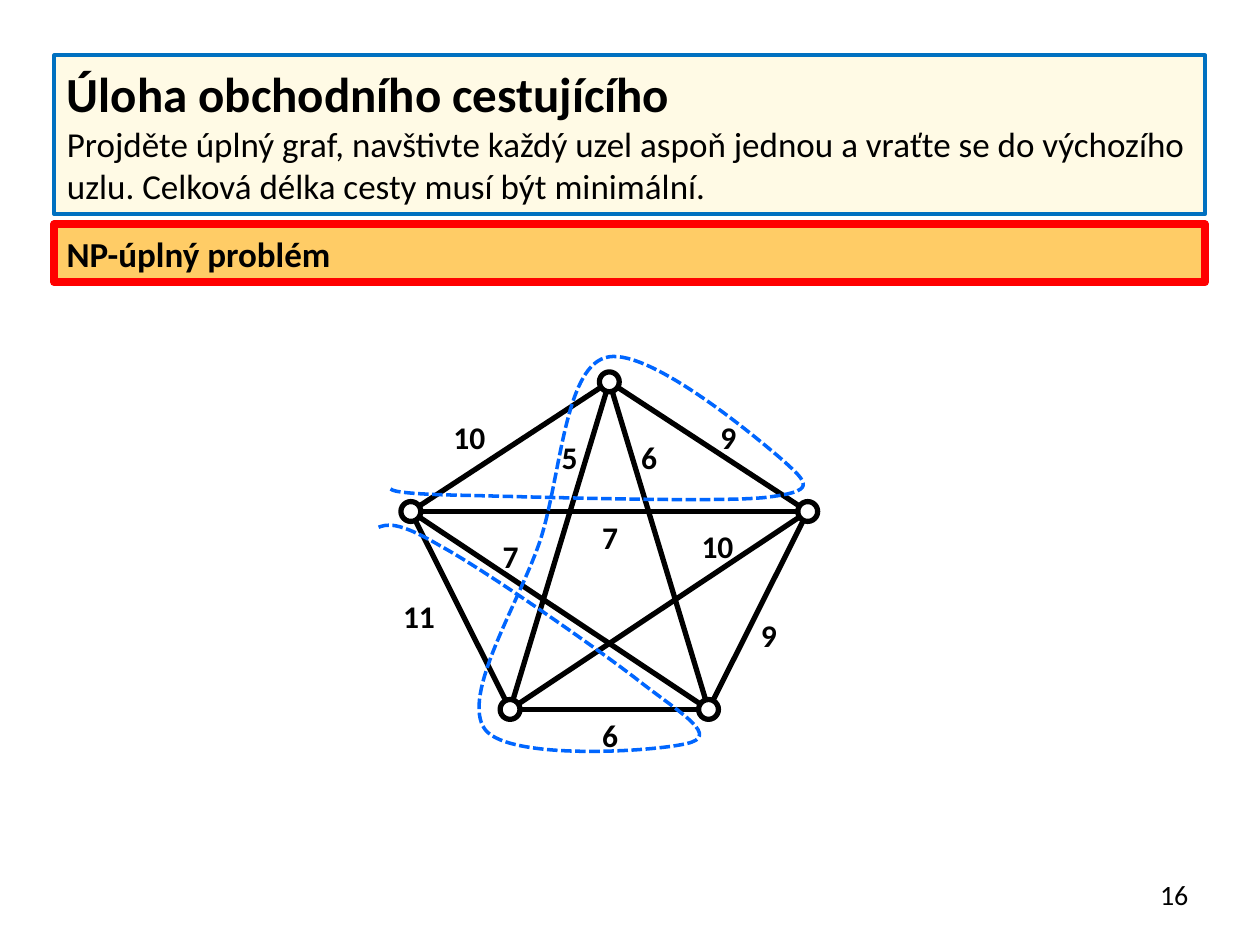
from itertools import combinations

from lxml import etree
from pptx import Presentation
from pptx import util as u
from pptx.enum import dml, shapes, text
from pptx.dml.color import RGBColor
from pptx.oxml import ns

COLORS = {"ink": "000000", "paper": "FFFFFF", "cream": "FFFAE5", "blue": "0070C0",
          "amber": "FFCC66", "red": "FF0000", "tour": "0066FF"}


class Deck:
    font = "Calibri"

    def __init__(self, prs):
        self.prs = prs
        self.s = prs.slides.add_slide(prs.slide_layouts[5])

    def color(self, name):
        return RGBColor.from_string(COLORS[name])

    def paint(self, sp, fill, line, width):
        if fill:
            sp.fill.solid()
            sp.fill.fore_color.rgb = self.color(fill)
        else:
            sp.fill.background()
        self.stroke(sp, line, width)

    def stroke(self, sp, line, width):
        sp.line.color.rgb = self.color(line)
        sp.line.width = u.Pt(width)

    def place(self, sp, box):
        for name, value in zip(("left", "top", "width", "height"), box):
            setattr(sp, name, u.Pt(value))

    def set_text(self, sp, lines, align="LEFT", anchor="MIDDLE", wrap=True):
        tf = sp.text_frame
        frame = {"word_wrap": wrap, "vertical_anchor": text.MSO_ANCHOR[anchor],
                 "auto_size": text.MSO_AUTO_SIZE.NONE if wrap
                 else text.MSO_AUTO_SIZE.SHAPE_TO_FIT_TEXT}
        for name, value in frame.items():
            setattr(tf, name, value)
        for i, (words, size, bold) in enumerate(lines):
            p = tf.paragraphs[0] if i == 0 else tf.add_paragraph()
            p.alignment = text.PP_ALIGN[align]
            r = p.add_run()
            r.text = words
            for name, value in {"name": self.font, "size": u.Pt(size), "bold": bold}.items():
                setattr(r.font, name, value)
            r.font.color.rgb = self.color("ink")

    def title(self, box, lines, fill, line, width):
        sp = self.s.shapes.title
        self.place(sp, box)
        self.paint(sp, fill, line, width)
        self.set_text(sp, lines)

    def shape(self, kind, box, fill, line, width):
        sp = self.s.shapes.add_shape(shapes.MSO_SHAPE[kind], *map(u.Pt, box))
        sp.shadow.inherit = False
        self.paint(sp, fill, line, width)
        return sp

    def label(self, box, words, size, bold, **layout):
        sp = self.s.shapes.add_textbox(*map(u.Pt, box))
        self.set_text(sp, [(words, size, bold)], **layout)

    def edge(self, a, b, line, width):
        sp = self.s.shapes.add_connector(shapes.MSO_CONNECTOR.STRAIGHT, *map(u.Pt, a + b))
        self.stroke(sp, line, width)
        etree.SubElement(sp._element.spPr, ns.qn("a:effectLst"))

    def curve(self, box, points, line, width):
        pts = [(u.Pt(x), u.Pt(y)) for x, y in points]
        fb = self.s.shapes.build_freeform(*pts[0])
        fb.add_line_segments(pts[1:], close=False)
        sp = fb.convert_to_shape()
        sp.shadow.inherit = False
        self.paint(sp, None, line, width)
        sp.line.dash_style = dml.MSO_LINE.SQUARE_DOT
        self.place(sp, box)
        outline = next(sp._element.iter(ns.qn("a:path")))
        outline.set("w", str(sp.width))
        outline.set("h", str(sp.height))
        for pt, (x, y) in zip(outline.iter(ns.qn("a:pt")), pts):
            pt.set("x", str(x - sp.left))
            pt.set("y", str(y - sp.top))
        steps = outline.findall(ns.qn("a:lnTo"))
        for i in range(0, len(steps), 3):
            bezier = etree.SubElement(outline, ns.qn("a:cubicBezTo"))
            for step in steps[i:i + 3]:
                bezier.append(step[0])
                outline.remove(step)


NODES = [(234.8, 292.3), (291.5, 405.4), (404.9, 405.4), (461.6, 292.3), (348.2, 218.2)]
NODE_SIZE = 11.34
WEIGHTS = [(252, 235.4, "10"), (337, 405.4, "6"), (427.7, 348.5, "9"), (223.2, 337.7, "11"),
           (404.6, 235.4, "9"), (393.8, 297.4, "10"), (337, 292.3, "7"),
           (359.3, 247, "6"), (313.9, 247, "5"), (280.1, 303.1, "7")]
TOUR_BOX = (215.3, 203.8, 243.4, 226.1)
TOUR = [(223.2, 279.4),
        (223.9, 280.1), (225.4, 282.2), (261.4, 283),
        (296.6, 283.7), (405.4, 287.3), (436.3, 284.4),
        (467.3, 280.8), (462.2, 276.5), (447.1, 262.8),
        (432, 249.8), (368.6, 196.6), (345.6, 204.5),
        (322.6, 211.7), (320.4, 272.2), (308.9, 308.2),
        (297.4, 343.4), (262.8, 397.4), (277.2, 416.9),
        (291.6, 435.6), (381.6, 429.1), (395.3, 424.1),
        (409.7, 419), (386.6, 406.1), (362.9, 387.4),
        (338.4, 368.6), (276.5, 325.4), (251.3, 311.8),
        (226.8, 297.4), (221, 299.5), (215.3, 301.7)]


def main():
    prs = Presentation()
    prs.slide_width, prs.slide_height = u.Pt(720), u.Pt(540)
    d = Deck(prs)
    d.title((31, 31.7, 657.6, 90.7), [
        ("Úloha obchodního cestujícího", 28, True),
        ("Projděte úplný graf, navštivte každý uzel aspoň jednou a vraťte se do "
         "výchozího uzlu. Celková délka cesty musí být minimální.", 20, False),
    ], "cream", "blue", 2.25)
    sp = d.shape("RECTANGLE", (31, 128.2, 657.6, 33.1), "amber", "red", 4.5)
    d.set_text(sp, [("NP-úplný problém", 20, True)])
    d.label((518.4, 496.8, 167.8, 28.8), "16", 16, False, align="RIGHT")
    for a, b in combinations(NODES, 2):
        d.edge(a, b, "ink", 3)
    for x, y in NODES:
        d.shape("OVAL", (x - NODE_SIZE / 2, y - NODE_SIZE / 2, NODE_SIZE, NODE_SIZE),
                "paper", "ink", 3)
    for x, y, weight in WEIGHTS:
        width = 14.4 + 9.2 * len(weight)
        d.label((x, y, width, 29), weight, 18, True, anchor="TOP", wrap=False)
    d.curve(TOUR_BOX, TOUR, "tour", 2)
    prs.save("out.pptx")


if __name__ == "__main__":
    main()
